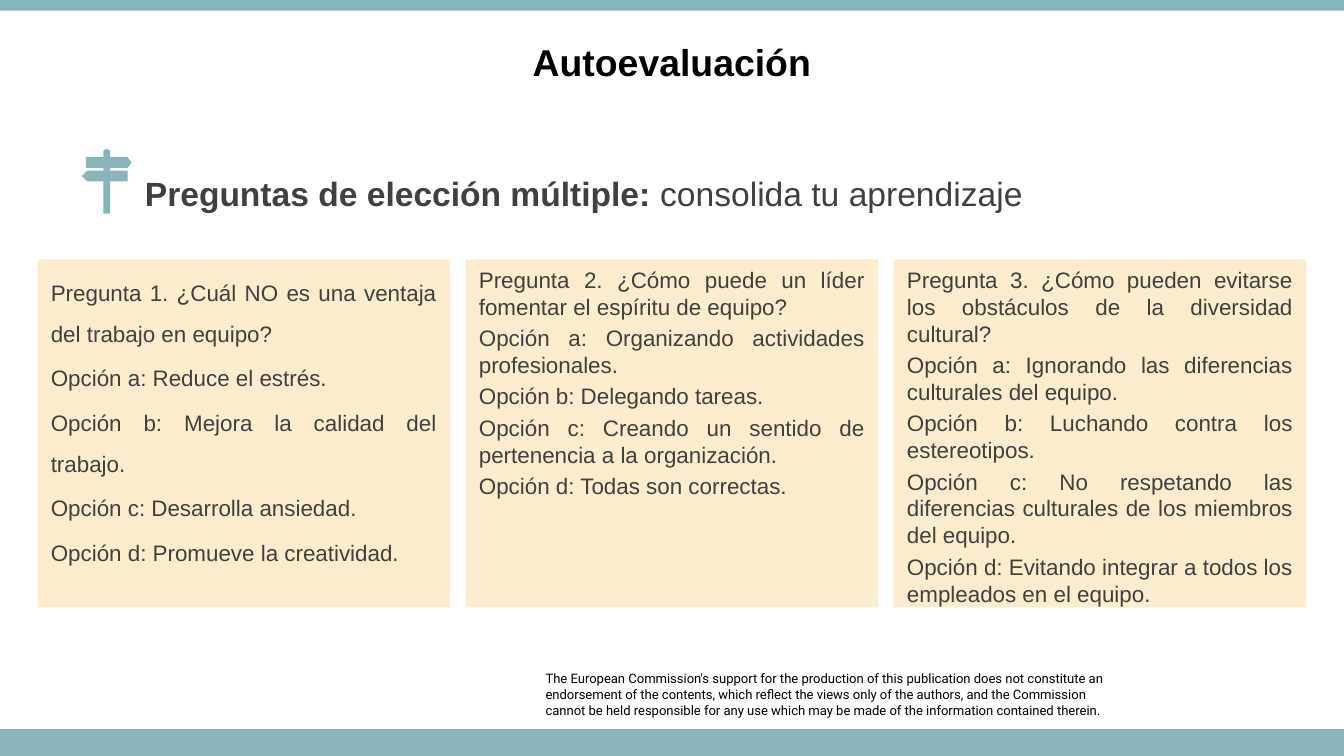
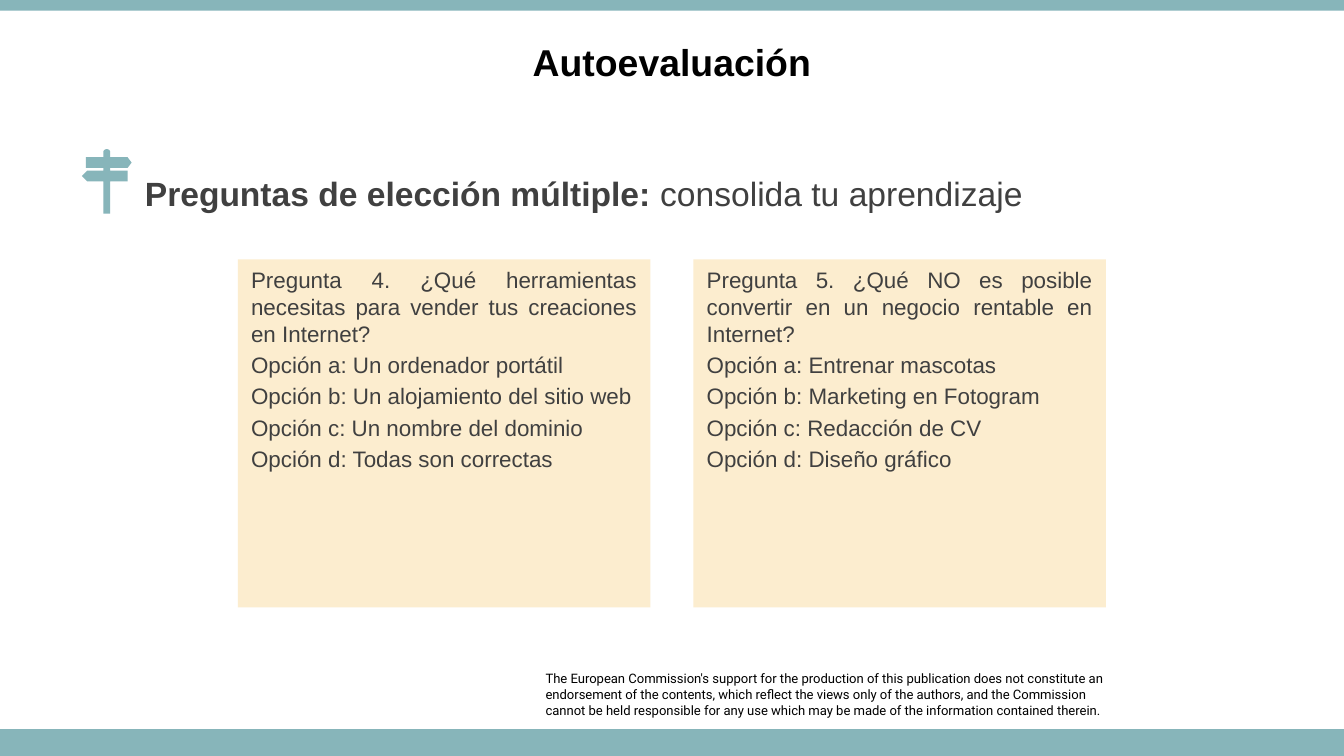
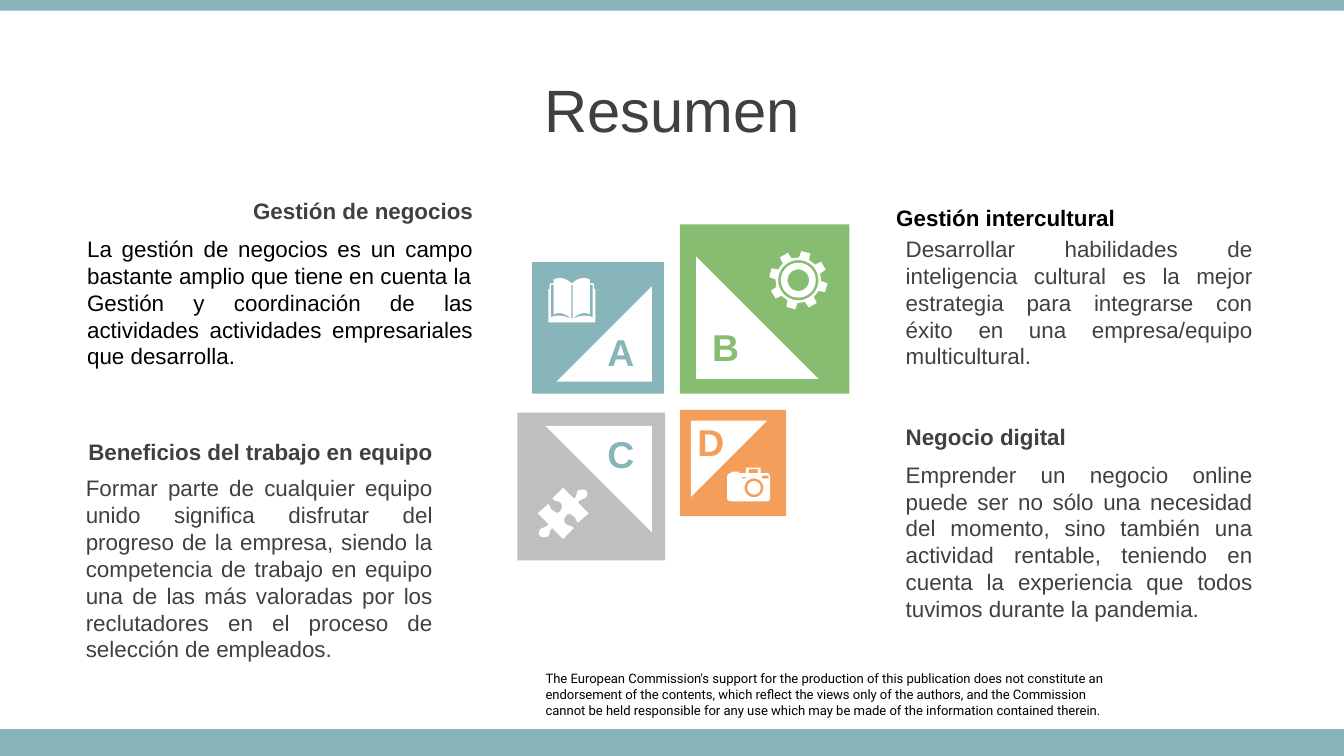
from math import cos, radians, sin

from pptx import Presentation
from pptx.dml.color import RGBColor
from pptx.enum.shapes import MSO_SHAPE as Preset
from pptx.enum.text import MSO_ANCHOR as Anchor, PP_ALIGN as Align
from pptx.util import Inches, Pt

CELL = Inches(0.1)
COLUMNS, ROWS = 100, 56.25

TEAL = RGBColor(0x87, 0xB5, 0xBA)
GREEN = RGBColor(0x86, 0xBD, 0x70)
ORANGE = RGBColor(0xF3, 0x9E, 0x5A)
GRAY = RGBColor(0xBF, 0xBF, 0xBF)
CREAM = RGBColor(0xFC, 0xED, 0xCF)
CHARCOAL = RGBColor(0x40, 0x40, 0x40)
BLACK = RGBColor(0, 0, 0)
WHITE = RGBColor(0xFF, 0xFF, 0xFF)

DISCLAIMER = [
    "The European Commission's support for the production of this publication does not "
    "constitute an endorsement of the contents, which reflect the views only of the "
    "authors, and the Commission",
    "cannot be held responsible for any use which may be made of the information "
    "contained therein.",
]

FIRST_QUESTIONS = [
    ["Pregunta 1. ¿Cuál NO es una ventaja del trabajo en equipo?",
     "Opción a: Reduce el estrés.",
     "Opción b: Mejora la calidad del trabajo.",
     "Opción c: Desarrolla ansiedad.",
     "Opción d: Promueve la creatividad."],
    ["Pregunta 2. ¿Cómo puede un líder fomentar el espíritu de equipo?",
     "Opción a: Organizando actividades profesionales.",
     "Opción b: Delegando tareas.",
     "Opción c: Creando un sentido de pertenencia a la organización.",
     "Opción d: Todas son correctas."],
    ["Pregunta 3. ¿Cómo pueden evitarse los obstáculos de la diversidad cultural?",
     "Opción a: Ignorando las diferencias culturales del equipo.",
     "Opción b: Luchando contra los estereotipos.",
     "Opción c: No respetando las diferencias culturales de los miembros del equipo.",
     "Opción d: Evitando integrar a todos los empleados en el equipo."],
]

LAST_QUESTIONS = [
    ["Pregunta 4. ¿Qué herramientas necesitas para vender tus creaciones en Internet?",
     "Opción a: Un ordenador portátil",
     "Opción b: Un alojamiento del sitio web",
     "Opción c: Un nombre del dominio",
     "Opción d: Todas son correctas"],
    ["Pregunta 5. ¿Qué NO es posible convertir en un negocio rentable en Internet?",
     "Opción a: Entrenar mascotas",
     "Opción b: Marketing en Fotogram",
     "Opción c: Redacción de CV",
     "Opción d: Diseño gráfico"],
]

# Badge: square (left, top, side), triangle (left, top, side, turn), letter (left, top)
BADGES = [
    ("A", TEAL, TEAL, (39.6, 19.5, 9.8), (41.4, 21.3, 7.1, 270), (44, 24)),
    ("B", GREEN, GREEN, (50.6, 16.7, 12.6), (51.8, 19.1, 9.1, 0), (51.8, 23.6)),
    ("C", GRAY, TEAL, (38.5, 30.7, 11), (40.6, 31.7, 7.9, 180), (44, 31.6)),
    ("D", ORANGE, ORANGE, (50.6, 30.5, 7.9), (51.4, 31.3, 5.7, 90), (50.7, 30.7)),
]

# Topic: heading, its box, alignment and colour, then body, its box and colour
TOPICS = [
    ("Gestión de negocios", (8.5, 14.2, 27.7, 3), Align.RIGHT, CHARCOAL,
     ["La gestión de negocios es un campo bastante amplio que tiene en cuenta la",
      "Gestión y coordinación de las actividades actividades empresariales que desarrolla."],
     (5.5, 17, 30.7, 11.1), BLACK),
    ("Beneficios del trabajo en equipo", (5.4, 32.1, 27.8, 3), Align.RIGHT, CHARCOAL,
     ["Formar parte de cualquier equipo unido significa disfrutar del progreso de la "
      "empresa, siendo la competencia de trabajo en equipo una de las más valoradas por "
      "los reclutadores en el proceso de selección de empleados."],
     (5.4, 34.8, 27.8, 15.1), CHARCOAL),
    ("Gestión intercultural", (65.7, 14.7, 27.8, 3), Align.LEFT, BLACK,
     ["Desarrollar habilidades de inteligencia cultural es la mejor estrategia para "
      "integrarse con éxito en una empresa/equipo multicultural."],
     (66.4, 17, 27.8, 11.1), CHARCOAL),
    ("Negocio digital", (66.4, 31, 27.8, 3), Align.LEFT, CHARCOAL,
     ["Emprender un negocio online puede ser no sólo una necesidad del momento, sino "
      "también una actividad rentable, teniendo en cuenta la experiencia que todos "
      "tuvimos durante la pandemia."],
     (66.4, 33.8, 27.8, 13.1), CHARCOAL),
]


def cells(*counts):
    """Turn counts of grid cells into slide lengths."""
    return [round(count * CELL) for count in counts]


def write(frame, lines, size, color=CHARCOAL, bold=False, align=Align.LEFT,
          font="Arial", gap=0, spacing=None, anchor=Anchor.TOP):
    """Fill a text frame with evenly styled paragraphs."""
    frame.word_wrap = True
    frame.vertical_anchor = anchor
    frame.text = "\n".join(lines)
    for index, paragraph in enumerate(frame.paragraphs):
        paragraph.alignment = align
        paragraph.line_spacing = spacing
        if index and gap:
            paragraph.space_before = Pt(gap)
        for run in paragraph.runs:
            style(run, size, color, bold, font)


def style(run, size, color, bold, font="Arial"):
    """Set the look of one run."""
    run.font.name = font
    run.font.size = Pt(size)
    run.font.bold = bold
    run.font.color.rgb = color


def add_text(slide, box, lines, size, **look):
    """Add a text box measured in cells."""
    frame = slide.shapes.add_textbox(*cells(*box)).text_frame
    write(frame, lines, size, **look)
    return frame


def paint(shape, color):
    """Give a shape a plain fill without line or shadow."""
    shape.shadow.inherit = False
    shape.fill.solid()
    shape.fill.fore_color.rgb = color
    shape.line.fill.background()
    return shape


def add_block(slide, box, color, preset=Preset.RECTANGLE, turn=0):
    """Add a flat preset shape measured in cells."""
    block = paint(slide.shapes.add_shape(preset, *cells(*box)), color)
    block.rotation = turn
    return block


def flatten(steps, parts=8):
    """Replace six-number Bezier steps by short straight ones."""
    points = []
    for step in steps:
        if len(step) == 2:
            points.append(step)
            continue
        x0, y0 = points[-1]
        x1, y1, x2, y2, x3, y3 = step
        for part in range(1, parts + 1):
            t = part / parts
            a, b, c, d = (1 - t) ** 3, 3 * t * (1 - t) ** 2, 3 * t * t * (1 - t), t ** 3
            points.append((a * x0 + b * x1 + c * x2 + d * x3,
                           a * y0 + b * y1 + c * y2 + d * y3))
    return points


def add_icon(slide, left, top, contours, color):
    """Draw contours given in tenths of a cell from an anchor in cells."""
    outlines = [[cells(left + x / 10, top + y / 10) for x, y in flatten(steps)]
                for steps in contours]
    builder = slide.shapes.build_freeform(*outlines[0][0], scale=1.0)
    builder.add_line_segments(outlines[0][1:], close=True)
    for outline in outlines[1:]:
        builder.move_to(*outline[0])
        builder.add_line_segments(outline[1:], close=True)
    paint(builder.convert_to_shape(), color)


def polar(radius, angle):
    """Give the point at an angle in degrees around the anchor."""
    return radius * cos(radians(angle)), radius * sin(radians(angle))


def circle(radius):
    """Give a round contour around the anchor."""
    return [polar(radius, angle) for angle in range(0, 360, 10)]


def rectangle(left, top, right, bottom):
    """Give a rectangular contour."""
    return [(left, top), (right, top), (right, bottom), (left, bottom)]


def mirror(steps, width):
    """Reflect a contour from side to side."""
    return [tuple(width - value if index % 2 == 0 else value
                  for index, value in enumerate(step)) for step in steps]


def add_signpost(slide):
    """Draw the signpost beside the heading."""
    post = [(16, 2), (16, 1, 17, 0, 18.5, 0), (20, 0, 21, 1, 21, 2), (21, 6), (34, 6),
            (37, 10), (34, 14), (21, 14), (21, 16), (34, 16), (34, 24), (21, 24),
            (21, 48), (16, 48), (16, 24), (4, 24), (0, 20), (4, 16), (16, 16),
            (16, 14), (3, 14), (3, 6), (16, 6)]
    add_icon(slide, 6.1, 11.1, [post], TEAL)


def add_book(slide):
    """Draw the open book of badge A."""
    cover = [(17.5, 4), (21, 1, 23, 0, 26, 0), (28, 0, 29, 0, 31, 1), (31, 4), (34, 4),
             (34, 8), (35, 8), (35, 33), (17.5, 33)]
    page_edge = [(31, 5), (33, 5), (33, 29), (27, 27, 24, 28, 18, 30),
                 (23, 26, 27, 25, 31, 27)]
    halves = [cover, mirror(cover, 35), page_edge, mirror(page_edge, 35)]
    add_icon(slide, 40.8, 20.7, halves + [rectangle(17, 5, 18, 30)], WHITE)


def add_gear(slide):
    """Draw the eight-toothed gear of badge B."""
    teeth = [polar(radius, center + turn) for center in range(15, 375, 45)
             for radius, turn in ((17, -13), (21.8, -9), (21.8, 9), (17, 13))]
    add_icon(slide, 59.4, 20.85, [teeth, circle(15), circle(13), circle(8)], WHITE)


def add_puzzle(slide):
    """Draw the puzzle piece of badge C from one half and its half turn."""
    half = [(17, -17), (18, -16, 19, -14, 17, -12), (15, -10, 13, -11, 11, -8), (19, 0),
            (11, 7), (9, 5, 10, 3, 7, 2), (6, 0, 3, 0, 2, 2), (1, 3, 0, 6, 2, 8),
            (5, 10, 5, 8, 8, 11), (0, 19), (-8, 11), (-11, 13, -9, 14, -11, 17),
            (-13, 18, -16, 18, -17, 17)]
    turned = [tuple(-value for value in step) for step in half]
    add_icon(slide, 41.9, 38.2, [half + turned], WHITE)


def add_camera(slide):
    """Draw the camera of badge D around its lens."""
    body = [(-17, -11), (-17, -12), (-11, -12), (-11, -11), (-6, -11), (-6, -14),
            (-6, -15, -6, -15, -5, -15), (4, -15), (5, -15, 5, -15, 5, -14), (5, -11),
            (10, -11), (11, -11, 12, -9, 12, -8), (12, 7), (12, 9, 11, 10, 10, 10),
            (-17, 10), (-19, 10, -20, 9, -20, 7), (-20, -8), (-20, -9, -19, -11, -17, -11)]
    windows = [rectangle(-9, -8, -6, -7), rectangle(6, -9, 11, -7),
               rectangle(-4, -14, 3, -11)]
    add_icon(slide, 56.1, 36.3, [body, circle(7), circle(5)] + windows, WHITE)


def add_page(deck):
    """Add a slide with the shared bands and disclaimer."""
    slide = deck.slides.add_slide(deck.slide_layouts[6])
    footer = add_text(slide, (40.6, 49.9, 41.7, 3.5), DISCLAIMER, 7, color=BLACK,
                      font="Roboto")
    footer.margin_left = footer.margin_right = footer.margin_top = footer.margin_bottom = 0
    add_block(slide, (0, ROWS - 2, COLUMNS, 2), TEAL)
    add_block(slide, (0, 0, COLUMNS, 0.8), TEAL)
    return slide


def add_title(slide, title, top, size, **look):
    """Add a title centred across the slide."""
    add_text(slide, (0, top, COLUMNS, 6.3), [title], size, align=Align.CENTER,
             anchor=Anchor.MIDDLE, **look)


def add_quiz_page(deck, questions, gap, spacings):
    """Add a self-assessment slide with a centred row of question cards."""
    slide = add_page(deck)
    add_title(slide, "Autoevaluación", 1.4, 20, color=BLACK, bold=True)
    heading = add_text(slide, (9.8, 12.8, 87.4, 3.1), ["Preguntas de elección múltiple: "],
                       18, bold=True, anchor=Anchor.MIDDLE)
    invitation = heading.paragraphs[0].add_run()
    invitation.text = "consolida tu aprendizaje"
    style(invitation, 18, CHARCOAL, False)
    add_signpost(slide)
    width = 30.7
    start = (COLUMNS - len(questions) * (width + gap) + gap) / 2
    for index, (lines, spacing) in enumerate(zip(questions, spacings)):
        box = (start + index * (width + gap), 19.3, width, 25.9)
        card = add_block(slide, box, CREAM)
        write(card.text_frame, lines, 12, align=Align.JUSTIFY, gap=2.4, spacing=spacing)


def add_summary_page(deck):
    """Add the summary slide with four badges and their topics."""
    slide = add_page(deck)
    add_title(slide, "Resumen", 4.9, 32)
    for letter, fill, ink, (left, top, side), (x, y, leg, turn), corner in BADGES:
        add_block(slide, (left, top, side, side), fill)
        add_block(slide, (x, y, leg, leg), WHITE, Preset.RIGHT_TRIANGLE, turn)
        add_text(slide, (*corner, 4.4, 4.4), [letter], 20, color=ink, bold=True,
                 align=Align.CENTER)
    for draw in (add_book, add_puzzle, add_gear, add_camera):
        draw(slide)
    for heading, heading_box, align, heading_ink, body, body_box, body_ink in TOPICS:
        add_text(slide, body_box, body, 12, color=body_ink, align=Align.JUSTIFY)
        add_text(slide, heading_box, [heading], 12, color=heading_ink, bold=True,
                 align=align)


def main():
    """Build and save the deck."""
    deck = Presentation()
    deck.slide_width, deck.slide_height = cells(COLUMNS, ROWS)
    add_quiz_page(deck, FIRST_QUESTIONS, 1.15, (1.5, None, None))
    add_quiz_page(deck, LAST_QUESTIONS, 3.2, (None, None))
    add_summary_page(deck)
    deck.save("out.pptx")


if __name__ == "__main__":
    main()
